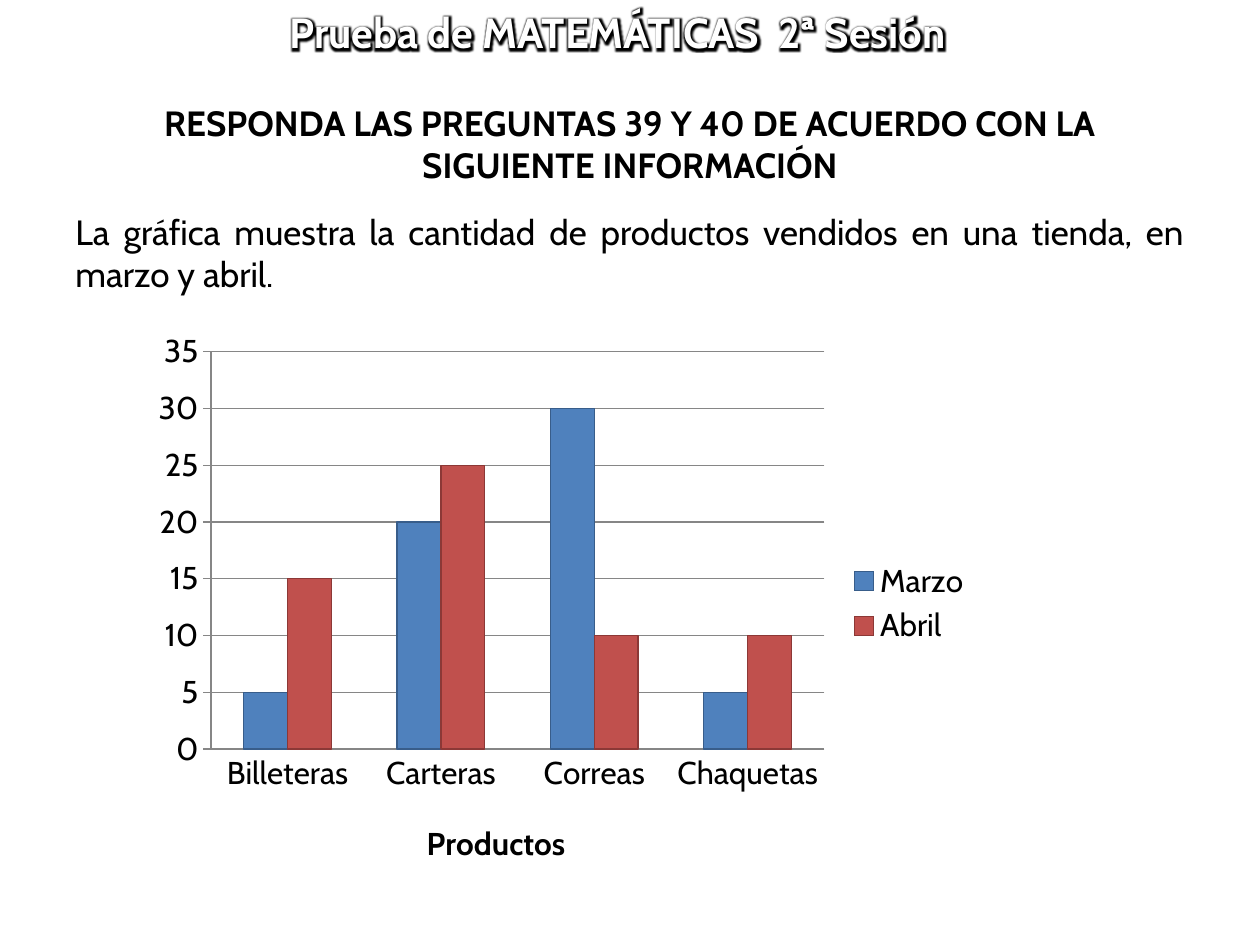
import lxml.etree
import pptx
import pptx.chart.data
import pptx.dml.color
import pptx.enum.chart
import pptx.enum.text
import pptx.oxml.ns
import pptx.util
from pptx.util import Inches

COLORS = {
    "text": "000000",
    "title": "FFFFFF",
    "glow": "000000",
    "grid": "868686",
    "Marzo": "4F81BD",
    "Marzo edge": "385D8A",
    "Abril": "C0504D",
    "Abril edge": "8C3836",
}
FONT = "Cabin"
ALIGN = pptx.enum.text.PP_ALIGN
CATEGORIES = ["Billeteras", "Carteras", "Correas", "Chaquetas"]
SALES = {"Marzo": [5, 20, 30, 5], "Abril": [15, 25, 10, 10]}


def color(name):
    return pptx.dml.color.RGBColor.from_string(COLORS[name])


def set_values(target, values):
    for name, value in values.items():
        setattr(target, name, value)


def format_font(font, size, bold=False, color_name="text"):
    set_values(font, {"name": FONT, "size": pptx.util.Pt(size), "bold": bold})
    font.color.rgb = color(color_name)


def format_line(line, color_name):
    line.color.rgb = color(color_name)
    line.width = pptx.util.Pt(0.75)


def add_text_frame(slide, box, anchor):
    frame = slide.shapes.add_textbox(*box).text_frame
    set_values(frame, {"word_wrap": True, "vertical_anchor": anchor})
    return frame


def add_glow(run, radius):
    qualify = pptx.oxml.ns.qn
    effects = lxml.etree.Element(qualify("a:effectLst"))
    glow = lxml.etree.SubElement(effects, qualify("a:glow"), rad=str(radius))
    lxml.etree.SubElement(glow, qualify("a:srgbClr"), val=COLORS["glow"])
    run.font.fill
    run.font._element.find(qualify("a:solidFill")).addnext(effects)


def add_title(slide, box):
    frame = add_text_frame(slide, box, pptx.enum.text.MSO_ANCHOR.MIDDLE)
    run = frame.paragraphs[0].add_run()
    run.text = "Prueba de MATEMÁTICAS  2ª Sesión"
    format_font(run.font, 24, True, "title")
    add_glow(run, pptx.util.Pt(5))


def add_instructions(slide, box):
    frame = add_text_frame(slide, box, pptx.enum.text.MSO_ANCHOR.TOP)
    heading = frame.paragraphs[0]
    statement = frame.add_paragraph()
    heading.text = "RESPONDA LAS PREGUNTAS 39 Y 40 DE ACUERDO CON LA SIGUIENTE INFORMACIÓN"
    statement.text = "La gráfica muestra la cantidad de productos vendidos en una tienda, en marzo y abril."
    set_values(heading, {"alignment": ALIGN.CENTER})
    set_values(statement, {"alignment": ALIGN.JUSTIFY, "space_before": pptx.util.Pt(14)})
    format_font(heading.runs[0].font, 20, True)
    format_font(statement.runs[0].font, 20)


def set_layout(element, values):
    qualify = pptx.oxml.ns.qn
    layout = element.find(qualify("c:layout"))
    if layout is None:
        layout = lxml.etree.Element(qualify("c:layout"))
        element.insert(0, layout)
    manual = lxml.etree.SubElement(layout, qualify("c:manualLayout"))
    for name, value in values.items():
        lxml.etree.SubElement(manual, qualify(f"c:{name}"), val=str(value))


def add_sales_chart(slide, box):
    data = pptx.chart.data.CategoryChartData()
    data.categories = CATEGORIES
    for name, values in SALES.items():
        data.add_series(name, values)
    kind = pptx.enum.chart.XL_CHART_TYPE.COLUMN_CLUSTERED
    chart = slide.shapes.add_chart(kind, *box, data).chart
    set_values(chart, {"has_title": False, "has_legend": True})
    format_font(chart.font, 18)
    set_values(chart.legend, {
        "position": pptx.enum.chart.XL_LEGEND_POSITION.RIGHT,
        "include_in_layout": False,
    })

    plot = chart.plots[0]
    set_values(plot, {"gap_width": 150, "overlap": 0, "vary_by_categories": False})
    for series in plot.series:
        series.format.fill.solid()
        series.format.fill.fore_color.rgb = color(series.name)
        format_line(series.format.line, f"{series.name} edge")

    tick = pptx.enum.chart.XL_TICK_MARK
    set_values(chart.category_axis, {"major_tick_mark": tick.NONE, "has_major_gridlines": False})
    set_values(chart.value_axis, {
        "major_tick_mark": tick.OUTSIDE,
        "has_major_gridlines": True,
        "minimum_scale": 0,
        "maximum_scale": 35,
        "major_unit": 5,
    })
    for axis in (chart.category_axis, chart.value_axis):
        format_line(axis.format.line, "grid")
    format_line(chart.value_axis.major_gridlines.format.line, "grid")

    title = chart.category_axis.axis_title
    title.text_frame.text = "Productos"
    format_font(title.text_frame.paragraphs[0].runs[0].font, 18, True)
    set_layout(title.element, {"xMode": "edge", "yMode": "edge", "x": 0.33, "y": 0.88})
    plot_area = chart.element.find(".//" + pptx.oxml.ns.qn("c:plotArea"))
    set_layout(plot_area, {
        "layoutTarget": "inner", "xMode": "edge", "yMode": "edge",
        "x": 0.08, "y": 0.05, "w": 0.73, "h": 0.71,
    })


def main():
    presentation = pptx.Presentation()
    set_values(presentation, {"slide_width": Inches(10), "slide_height": Inches(7.5)})
    slide = presentation.slides.add_slide(presentation.slide_layouts[6])
    add_title(slide, (Inches(2.2), Inches(-0.09), Inches(7.6), Inches(0.69)))
    add_instructions(slide, (Inches(0.5), Inches(0.76), Inches(9), Inches(5.35)))
    add_sales_chart(slide, (Inches(1.14), Inches(2.57), Inches(6.67), Inches(4.44)))
    presentation.save("out.pptx")


if __name__ == "__main__":
    main()
